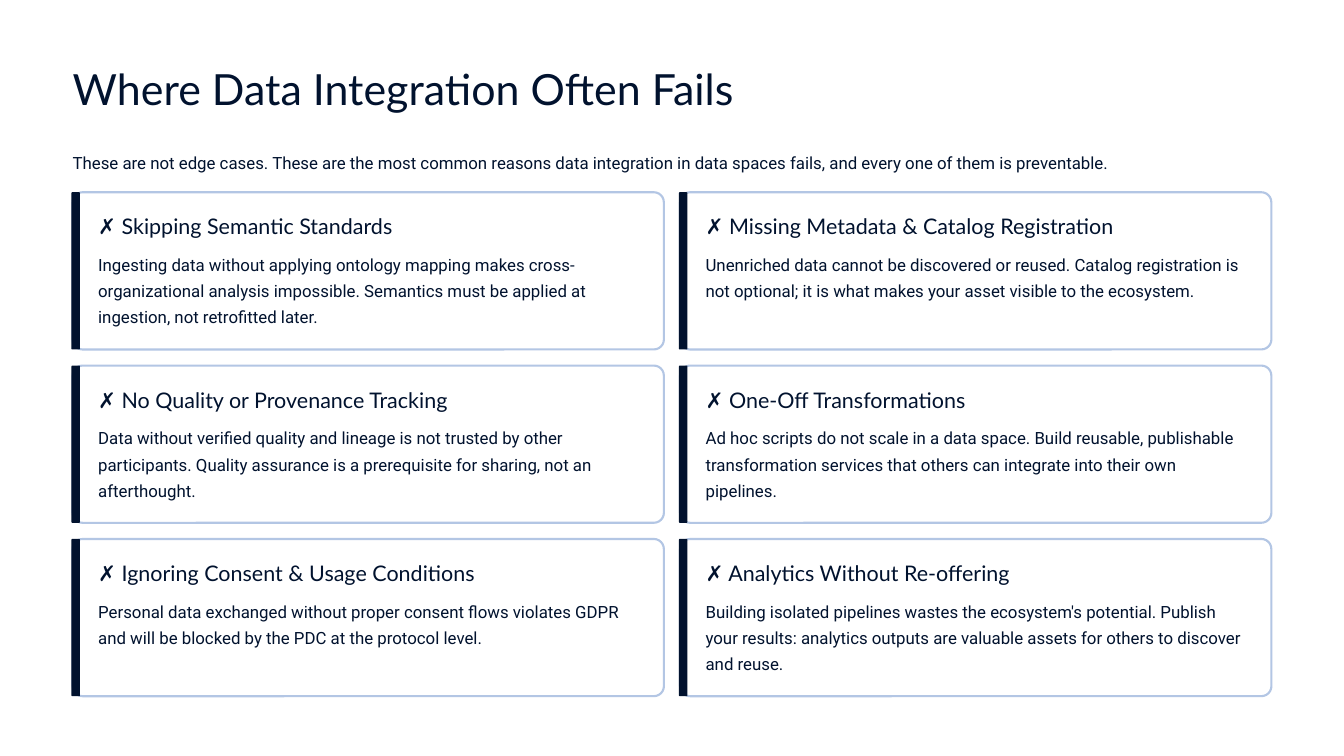
"""Build the slide on common data integration failures as a grid of six cards."""
from dataclasses import dataclass

from pptx import Presentation
from pptx.dml.color import RGBColor
from pptx.enum import shapes, text
from pptx.slide import Slide
from pptx.util import Pt

COLORS = {"navy": "01122E", "border": "B3C6E4", "white": "FFFFFF"}
COLUMNS = 2
LEFT, TOP = 38.9, 103
CARD_WIDTH, CARD_HEIGHT = 316.8, 84.24
COLUMN_STEP, ROW_STEP = 325.44, 92.88
ACCENT_WIDTH = 4.5
PADDING = 13.7
BODY_WIDTH, BODY_LINE = 292.3, 14.4


@dataclass(frozen=True)
class Style:
    """Font and line spacing of one text level."""
    font: str
    size: float
    spacing: float


@dataclass(frozen=True)
class Box:
    """Position and size in points."""
    left: float
    top: float
    width: float
    height: float


@dataclass(frozen=True)
class Failure:
    """One reason for failure with the room its texts take."""
    heading: str
    heading_width: float
    body: str
    body_lines: int


TITLE = Style("Lato", 23, 1.04)
HEADING = Style("Lato", 11.5, 1.04)
BODY = Style("Roboto", 9, 1.3)

FAILURES = [
    Failure("Skipping Semantic Standards", 166.3,
            "Ingesting data without applying ontology mapping makes cross-organizational "
            "analysis impossible. Semantics must be applied at ingestion, not retrofitted later.", 3),
    Failure("Missing Metadata & Catalog Registration", 229.7,
            "Unenriched data cannot be discovered or reused. Catalog registration is not "
            "optional; it is what makes your asset visible to the ecosystem.", 2),
    Failure("No Quality or Provenance Tracking", 194.4,
            "Data without verified quality and lineage is not trusted by other participants. "
            "Quality assurance is a prerequisite for sharing, not an afterthought.", 3),
    Failure("One-Off Transformations", 145.4,
            "Ad hoc scripts do not scale in a data space. Build reusable, publishable "
            "transformation services that others can integrate into their own pipelines.", 3),
    Failure("Ignoring Consent & Usage Conditions", 205.2,
            "Personal data exchanged without proper consent flows violates GDPR and will be "
            "blocked by the PDC at the protocol level.", 2),
    Failure("Analytics Without Re-offering", 168.5,
            "Building isolated pipelines wastes the ecosystem's potential. Publish your results: "
            "analytics outputs are valuable assets for others to discover and reuse.", 3),
]


def color(name: str) -> RGBColor:
    """Look up a colour by name."""
    return RGBColor.from_string(COLORS[name])


def add_text(slide: Slide, box: Box, words: str, style: Style) -> None:
    """Add one paragraph in a text box without margins."""
    frame = slide.shapes.add_textbox(
        Pt(box.left), Pt(box.top), Pt(box.width), Pt(box.height)).text_frame
    frame.word_wrap = True
    frame.vertical_anchor = text.MSO_ANCHOR.TOP
    frame.margin_left = frame.margin_top = frame.margin_right = frame.margin_bottom = 0
    paragraph = frame.paragraphs[0]
    paragraph.line_spacing = style.spacing
    run = paragraph.add_run()
    run.text = words
    run.font.name = style.font
    run.font.size = Pt(style.size)
    run.font.color.rgb = color("navy")


def add_panel(slide: Slide, box: Box, rounding: float, fill: str, border: str = "") -> None:
    """Add a rounded rectangle with an optional border."""
    panel = slide.shapes.add_shape(
        shapes.MSO_SHAPE.ROUNDED_RECTANGLE,
        Pt(box.left), Pt(box.top), Pt(box.width), Pt(box.height))
    panel.adjustments[0] = rounding
    panel.shadow.inherit = False
    panel.fill.solid()
    panel.fill.fore_color.rgb = color(fill)
    if border:
        panel.line.color.rgb = color(border)
        panel.line.width = Pt(1.12)
    else:
        panel.line.fill.background()


def add_card(slide: Slide, left: float, top: float, failure: Failure) -> None:
    """Draw a card with its accent bar, heading and body."""
    add_panel(slide, Box(left, top, CARD_WIDTH, CARD_HEIGHT), 0.064, "white", "border")
    add_panel(slide, Box(left - 0.6, top, ACCENT_WIDTH, CARD_HEIGHT), 0.1, "navy")
    inner = left + PADDING
    add_text(slide, Box(inner, top + 10.8, failure.heading_width, 14.4),
             f"✗ {failure.heading}", HEADING)
    add_text(slide, Box(inner, top + 30.2, BODY_WIDTH, failure.body_lines * BODY_LINE),
             failure.body, BODY)


def main() -> None:
    """Create the presentation and save it."""
    deck = Presentation()
    deck.slide_width, deck.slide_height = Pt(720), Pt(405)
    slide = deck.slides.add_slide(deck.slide_layouts[6])
    slide.background.fill.solid()
    slide.background.fill.fore_color.rgb = color("white")
    add_text(slide, Box(LEFT, 32.4, 414, 28.8), "Where Data Integration Often Fails", TITLE)
    add_text(slide, Box(LEFT, 78.5, 677.5, 14.4),
             "These are not edge cases. These are the most common reasons data integration "
             "in data spaces fails, and every one of them is preventable.", BODY)
    for index, failure in enumerate(FAILURES):
        row, column = divmod(index, COLUMNS)
        add_card(slide, LEFT + column * COLUMN_STEP, TOP + row * ROW_STEP, failure)
    deck.save("out.pptx")


if __name__ == "__main__":
    main()
